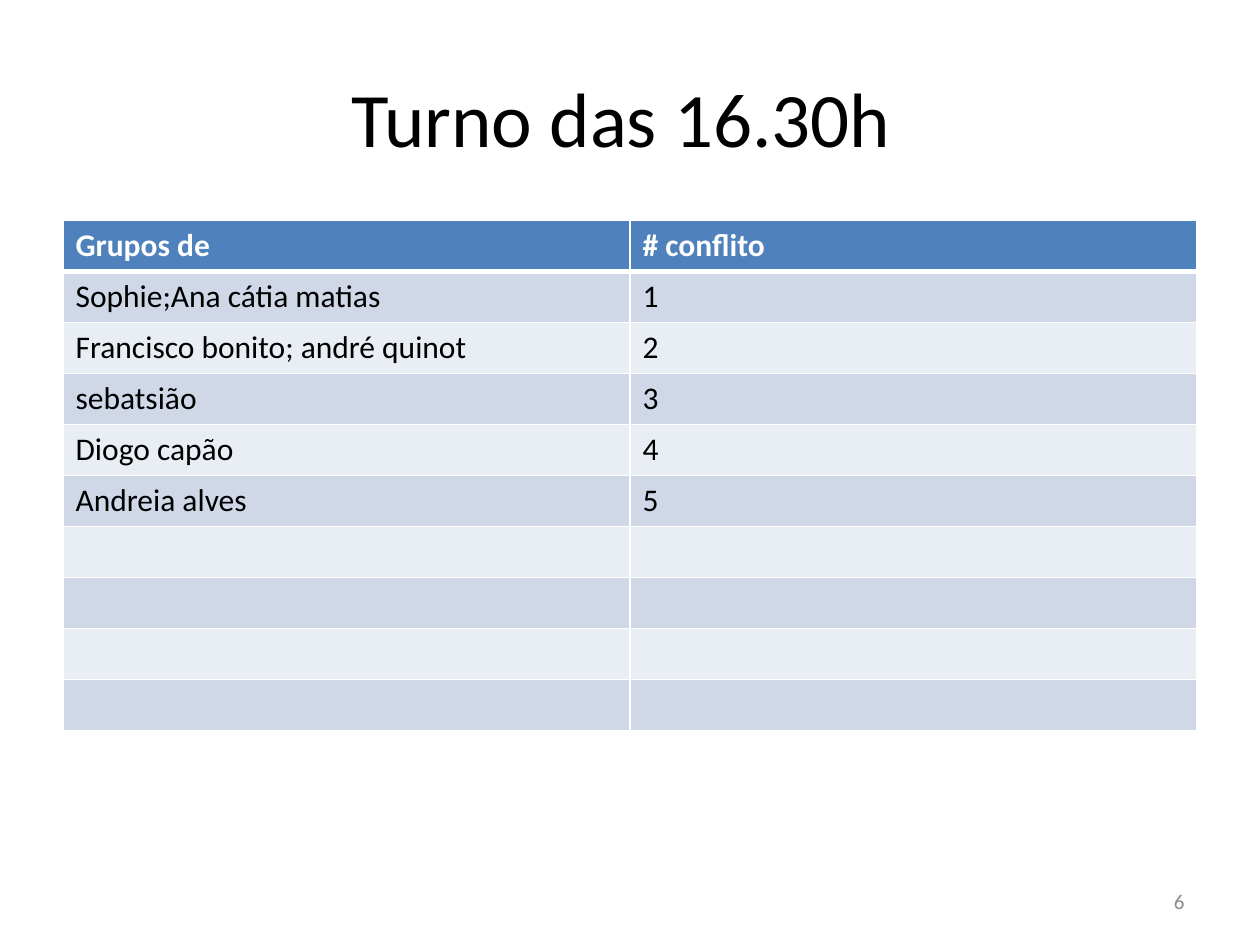
import pptx
import pptx.dml.color
import pptx.enum.text
import pptx.oxml
import pptx.oxml.ns
import pptx.util
from pptx.util import Inches


def color(value):
    return pptx.dml.color.RGBColor.from_string(value)


def add_text(frame, text, size, font_color, bold=False, alignment=None):
    paragraph = frame.paragraphs[0]
    paragraph.alignment = alignment
    run = paragraph.add_run()
    run.text = text
    run.font.name = "Calibri"
    run.font.size = pptx.util.Pt(size)
    run.font.bold = bold
    run.font.color.rgb = color(font_color)


presentation = pptx.Presentation()
presentation.slide_width = Inches(10)
presentation.slide_height = Inches(7.5)
slide = presentation.slides.add_slide(presentation.slide_layouts[6])

# Title and slide number
align = pptx.enum.text.PP_ALIGN
for text, left, top, width, height, size, font_color, alignment in [
    ("Turno das 16.30h ", 0.5, 0.3, 9, 1.25, 44, "000000", align.CENTER),
    ("6", 7.17, 6.95, 2.33, 0.4, 12, "8C8C8C", align.RIGHT),
]:
    box = slide.shapes.add_textbox(
        Inches(left), Inches(top), Inches(width), Inches(height))
    box.text_frame.word_wrap = True
    box.text_frame.vertical_anchor = pptx.enum.text.MSO_ANCHOR.MIDDLE
    add_text(box.text_frame, text, size, font_color, alignment=alignment)

# Table of groups, with four rows left free
rows = [
    ("Grupos de", "# conflito"),
    ("Sophie;Ana cátia matias", "1"),
    ("Francisco bonito; andré quinot", "2"),
    ("sebatsião", "3"),
    ("Diogo capão", "4"),
    ("Andreia alves", "5"),
] + [("", "")] * 4
table = slide.shapes.add_table(
    len(rows), 2, Inches(0.5), Inches(1.75), Inches(9), Inches(4.05)).table

for row_index, row in enumerate(rows):
    header = row_index == 0
    fill = "4F81BD" if header else ("E9EDF4", "D0D8E8")[row_index % 2]
    for column_index, text in enumerate(row):
        cell = table.cell(row_index, column_index)
        cell.fill.solid()
        cell.fill.fore_color.rgb = color(fill)
        if text:
            add_text(cell.text_frame, text, 18,
                     "FFFFFF" if header else "000000", bold=header)

        # White borders, thicker between header and body
        properties = cell._tc.get_or_add_tcPr()
        for position, side in enumerate("LRTB"):
            thick = (row_index, side) in [(0, "B"), (1, "T")]
            border = pptx.oxml.parse_xml(
                f'<a:ln{side} {pptx.oxml.ns.nsdecls("a")} '
                f'w="{pptx.util.Pt(3 if thick else 1)}"><a:solidFill>'
                f'<a:srgbClr val="FFFFFF"/></a:solidFill></a:ln{side}>')
            properties.insert(position, border)

presentation.save("out.pptx")
